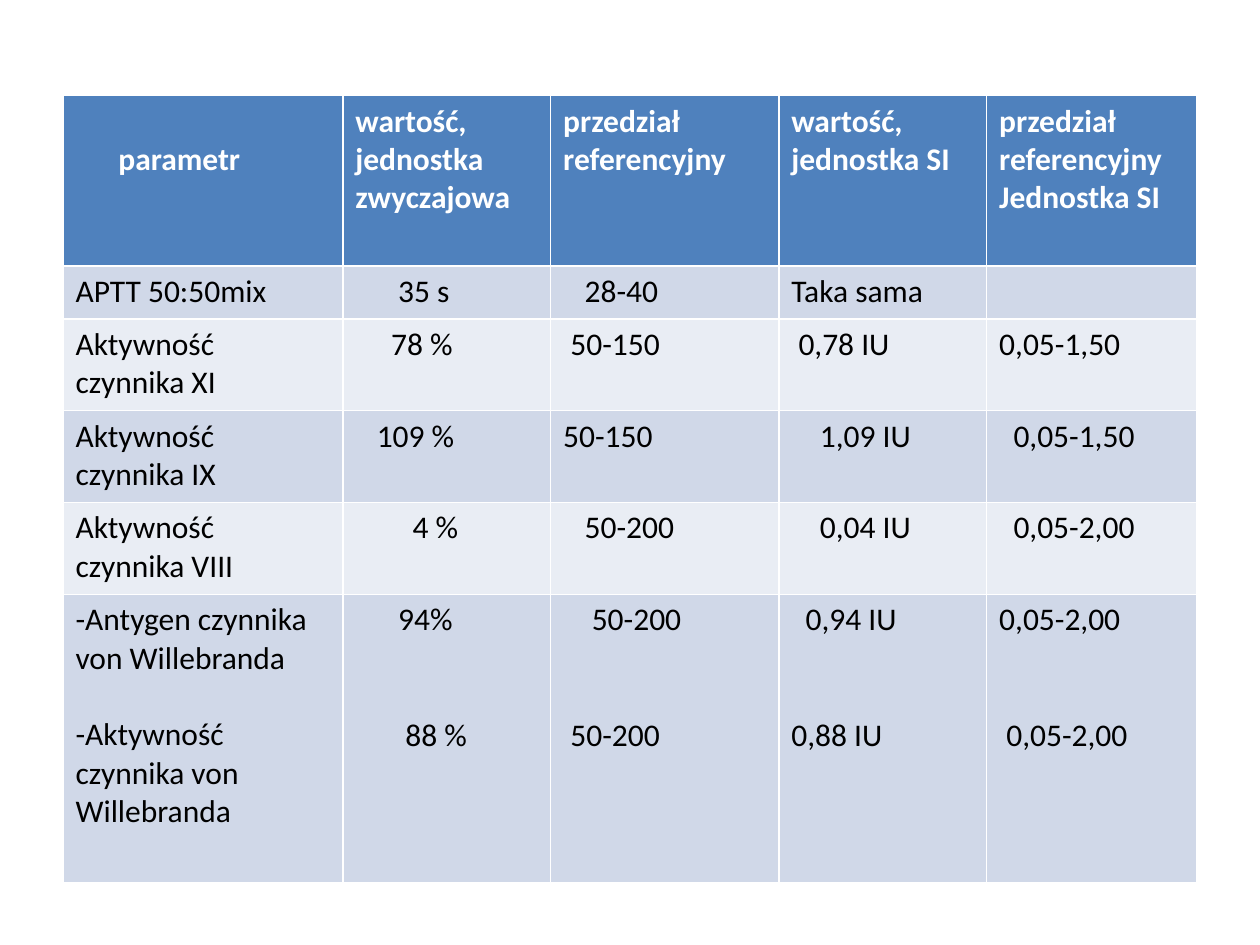
"""Build a slide with a table of clotting test results."""
import pptx
import pptx.dml.color
import pptx.util

Cm = pptx.util.Cm
Pt = pptx.util.Pt


def tint(code):
    return pptx.dml.color.RGBColor.from_string(code)


space = Cm(0.144)
line = Pt(22)
wide = [5.64, 4.19, 4.6, 4.19, 4.24]
high = [3.43, 1.07, 1.85, 1.85, 1.85, 5.82]
rows = [
    [[(6, "parametr")], [(0, "wartość, jednostka zwyczajowa")],
     [(0, "przedział referencyjny")], [(0, "wartość, jednostka SI")],
     [(0, "przedział referencyjny"), (0, "Jednostka SI")]],
    [[(0, "APTT 50:50mix")], [(6, "35 s")], [(3, "28-40")],
     [(0, "Taka sama")], []],
    [[(0, "Aktywność czynnika XI")], [(5, "78 %")], [(1, "50-150")],
     [(1, "0,78 IU")], [(0, "0,05-1,50")]],
    [[(0, "Aktywność czynnika IX")], [(3, "109 %")], [(0, "50-150")],
     [(4, "1,09 IU")], [(2, "0,05-1,50")]],
    [[(0, "Aktywność czynnika VIII")], [(8, "4 %")], [(3, "50-200")],
     [(4, "0,04 IU")], [(2, "0,05-2,00")]],
    [[(0, "-Antygen czynnika von Willebranda"),
      (0, "-Aktywność czynnika von Willebranda")],
     [(6, "94%"), (7, "88 %")], [(4, "50-200"), (1, "50-200")],
     [(2, "0,94 IU"), (0, "0,88 IU")], [(0, "0,05-2,00"), (1, "0,05-2,00")]],
]

deck = pptx.Presentation()
deck.slide_width, deck.slide_height = Cm(25.4), Cm(19.05)
slide = deck.slides.add_slide(deck.slide_layouts[6])
table = slide.shapes.add_table(
    len(rows), len(wide), Cm(1.27), Cm(1.93), Cm(sum(wide)), Cm(sum(high))).table
for col, size in zip(table.columns, wide):
    col.width = Cm(size)
for row, size in zip(table.rows, high):
    row.height = Cm(size)

for r, row in enumerate(rows):
    head = r == 0
    fill = "4F81BD" if head else "D0D8E8" if r % 2 else "E9EDF4"
    for c, items in enumerate(row):
        cell = table.cell(r, c)
        cell.fill.solid()
        cell.fill.fore_color.rgb = tint(fill)
        cell.text_frame.text = "\n".join(text for _, text in items)
        for i, para in enumerate(cell.text_frame.paragraphs):
            para.font.size = Pt(18)
            if items and items[i][0]:
                para._p.get_or_add_pPr().set("marL", str(items[i][0] * space))
            if i and not head:
                para.space_before = line if c == 0 else line * 2
            for run in para.runs:
                run.font.name = "Calibri"
                run.font.size = Pt(18)
                run.font.bold = head
                run.font.color.rgb = tint("FFFFFF" if head else "000000")
table.cell(0, 0).margin_top = Cm(0.13) + line

deck.save("out.pptx")
